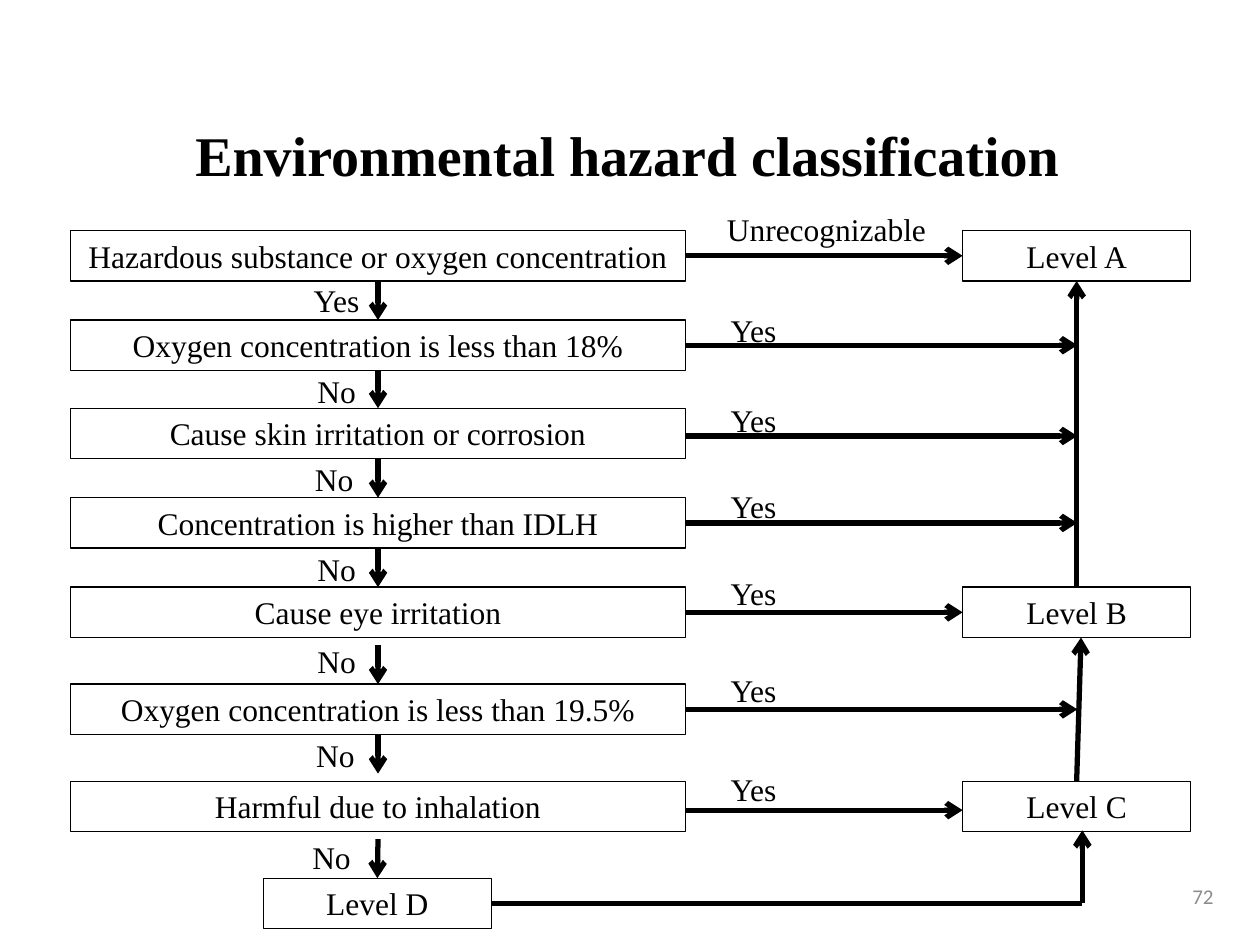
from lxml import etree
from pptx import Presentation
from pptx import util as u
from pptx.dml.color import RGBColor
from pptx.enum import shapes, text
from pptx.oxml import ns

BLACK = RGBColor(0, 0, 0)
WHITE = RGBColor(255, 255, 255)
GREY = RGBColor(0x8C, 0x8C, 0x8C)
SERIF = "Times New Roman"
TOP, LEFT, BOTTOM, RIGHT = range(4)
BOX_HEIGHT = 0.4
MERGE_X = 8.55  # where the answers meet the line between two levels
LABEL_WIDTHS = {"Yes": 0.57, "No": 0.51, "Unrecognizable": 1.81}

# question, box top, arrow height, (answer leading right, left, top)
QUESTIONS = [
    ("Hazardous substance or oxygen concentration", 1.83, 2.03, ("Unrecognizable", 5.67, 1.62)),
    ("Oxygen concentration is less than 18%", 2.54, 2.74, ("Yes", 5.7, 2.42)),
    ("Cause skin irritation or corrosion", 3.24, 3.46, ("Yes", 5.7, 3.13)),
    ("Concentration is higher than IDLH", 3.95, 4.15, ("Yes", 5.7, 3.82)),
    ("Cause eye irritation", 4.66, 4.85, ("Yes", 5.7, 4.51)),
    ("Oxygen concentration is less than 19.5%", 5.43, 5.63, ("Yes", 5.7, 5.28)),
    ("Harmful due to inhalation", 6.2, 6.43, ("Yes", 5.7, 6.06)),
]
# answer leading down, left, top
DOWN_ANSWERS = [
    ("Yes", 2.39, 2.18), ("No", 2.42, 2.9), ("No", 2.4, 3.6), ("No", 2.42, 4.32),
    ("No", 2.42, 5.05), ("No", 2.41, 5.79), ("No", 2.38, 6.6),
]
# Arrows that stop short of a box: index -> free start or end height
LATE_STARTS = {4: 5.12, 6: 6.66}
EARLY_ENDS = {5: 6.14}
# question index -> level its answer leads straight to
DIRECT_LEVELS = {0: "Level A", 4: "Level B", 6: "Level C"}


def set_text(shape, wording, size=18, font=SERIF, color=BLACK, bold=False,
             align=text.PP_ALIGN.LEFT, wrap=True):
    frame = shape.text_frame
    frame.text = wording
    frame.word_wrap = wrap
    paragraph = frame.paragraphs[0]
    paragraph.alignment = align
    paragraph.font.name = font
    paragraph.font.size = u.Pt(size)
    paragraph.font.bold = bold
    paragraph.font.color.rgb = color


def add_title(slide):
    title = slide.shapes.title
    title.left, title.top = u.Inches(1.45), u.Inches(0.91)
    title.width, title.height = u.Inches(7.12), u.Inches(0.64)
    title.fill.solid()
    title.fill.fore_color.rgb = WHITE
    set_text(title, "Environmental hazard classification", 32, bold=True, wrap=False)
    title.text_frame.vertical_anchor = text.MSO_ANCHOR.TOP


def add_box(slide, wording, left, top, width):
    box = slide.shapes.add_shape(shapes.MSO_SHAPE.RECTANGLE, u.Inches(left),
                                 u.Inches(top), u.Inches(width), u.Inches(BOX_HEIGHT))
    box.shadow.inherit = False
    box.fill.background()
    box.line.color.rgb = BLACK
    box.line.width = u.Pt(0.75)
    set_text(box, wording, align=text.PP_ALIGN.CENTER)
    box.text_frame.vertical_anchor = text.MSO_ANCHOR.TOP
    return box


def add_label(slide, wording, left, top):
    label = slide.shapes.add_textbox(u.Inches(left), u.Inches(top),
                                     u.Inches(LABEL_WIDTHS[wording]), u.Inches(BOX_HEIGHT))
    set_text(label, wording, wrap=False)


def add_line(slide, start, end, arrow=True):
    """Each end is either a (box, site) pair or an (x, y) point in inches."""
    joined = [not isinstance(place[0], (int, float)) for place in (start, end)]
    points = [(0, 0) if is_joined else place
              for is_joined, place in zip(joined, (start, end))]
    line = slide.shapes.add_connector(
        shapes.MSO_CONNECTOR.STRAIGHT,
        *[u.Inches(value) for point in points for value in point])
    if joined[0]:
        line.begin_connect(*start)
    if joined[1]:
        line.end_connect(*end)
    line.line.color.rgb = BLACK
    line.line.width = u.Pt(3)
    if arrow:
        etree.SubElement(line.line._get_or_add_ln(), ns.qn("a:tailEnd"), type="arrow")
    etree.SubElement(line._element.spPr, ns.qn("a:effectLst"))


def add_slide_number(slide):
    number = slide.shapes.add_textbox(u.Inches(7.4), u.Inches(6.91),
                                      u.Inches(2.33), u.Inches(0.4))
    set_text(number, "72", 12, "Calibri", GREY, align=text.PP_ALIGN.RIGHT)
    number.text_frame.vertical_anchor = text.MSO_ANCHOR.MIDDLE


def main():
    presentation = Presentation()
    presentation.slide_width, presentation.slide_height = u.Inches(10), u.Inches(7.5)
    slide = presentation.slides.add_slide(presentation.slide_layouts[5])
    add_title(slide)

    steps = [add_box(slide, wording, 0.56, top, 4.88) for wording, top, *_ in QUESTIONS]
    level_d = add_box(slide, "Level D", 2.09, 6.97, 1.81)
    steps.append(level_d)
    levels = {name: add_box(slide, name, 7.64, top, 1.81)
              for name, top in (("Level A", 1.83), ("Level B", 4.66), ("Level C", 6.2))}

    for index, (_, top, arrow_y, answer) in enumerate(QUESTIONS):
        start, end = (5.44, arrow_y), (MERGE_X, arrow_y)
        if abs(arrow_y - top - BOX_HEIGHT / 2) < 0.015:
            start = (steps[index], RIGHT)
        if index in DIRECT_LEVELS:
            is_middle = start[0] is steps[index]
            end = (levels[DIRECT_LEVELS[index]], LEFT) if is_middle else (7.64, arrow_y)
        add_line(slide, start, end)
        add_label(slide, *answer)

        start, end = (steps[index], BOTTOM), (steps[index + 1], TOP)
        if index in LATE_STARTS:
            start = (3, LATE_STARTS[index])
        if index in EARLY_ENDS:
            end = (3, EARLY_ENDS[index])
        add_line(slide, start, end)
        add_label(slide, *DOWN_ANSWERS[index])

    add_line(slide, (levels["Level B"], TOP), (levels["Level A"], BOTTOM))
    add_line(slide, (levels["Level C"], TOP), (8.58, 5.06))
    corner = (8.59, 7.17)
    add_line(slide, (level_d, RIGHT), corner, arrow=False)
    add_line(slide, corner, (8.59, 6.59))
    add_slide_number(slide)
    presentation.save("out.pptx")


if __name__ == "__main__":
    main()
